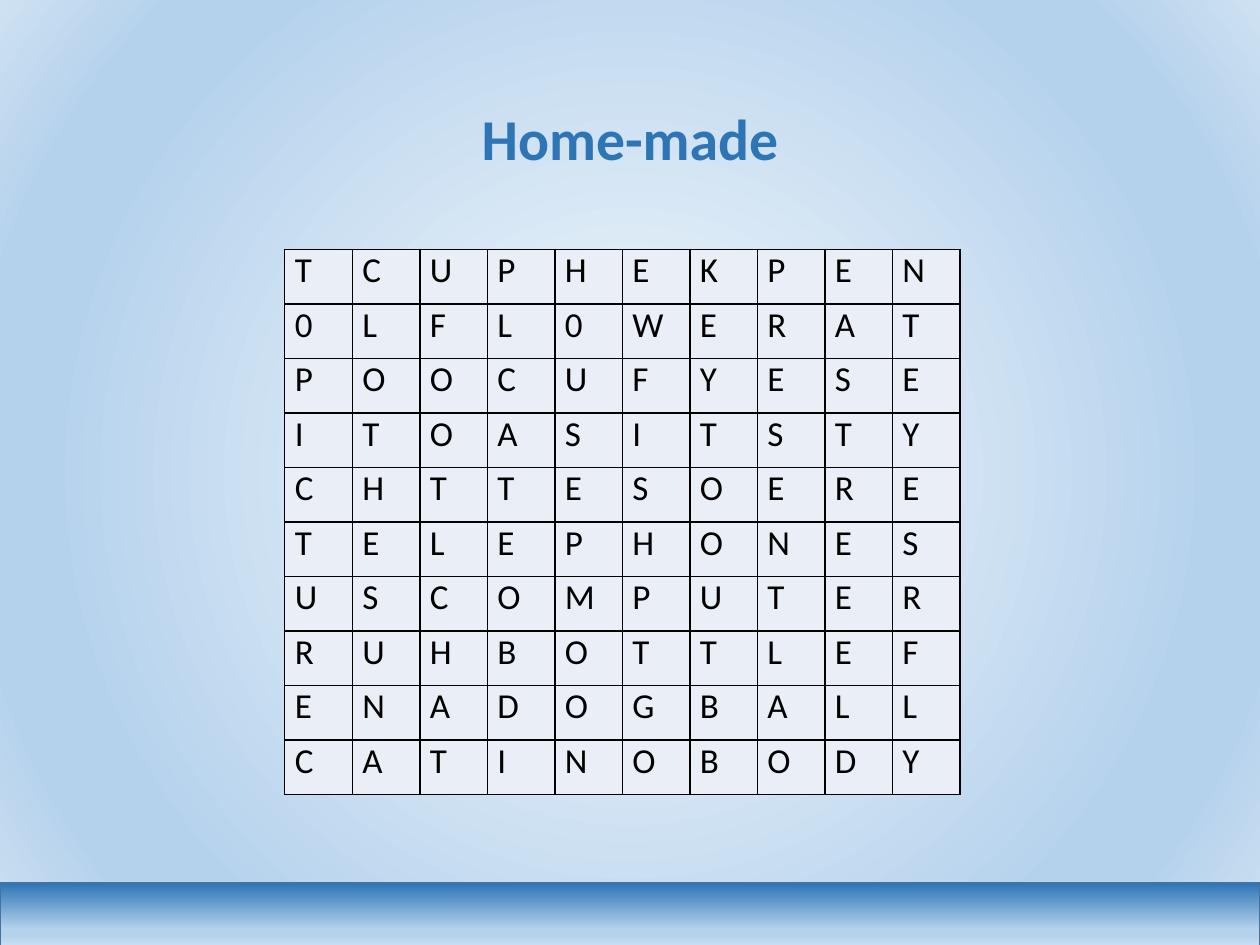
from pptx import Presentation
from pptx.dml.color import RGBColor
from pptx.enum.shapes import MSO_SHAPE as Shape
from pptx.enum.text import MSO_ANCHOR as Anchor, PP_ALIGN as Align
from pptx.oxml import parse_xml
from pptx.oxml.ns import nsdecls, qn
from pptx.util import Inches, Pt

BLACK = RGBColor(0x00, 0x00, 0x00)
BLUE = RGBColor(0x2E, 0x75, 0xB6)
EDGE_BLUE = RGBColor(0x43, 0x73, 0x9E)
SKY = RGBColor(0xB5, 0xD2, 0xEC)
PALE_SKY = RGBColor(0xCE, 0xE1, 0xF2)
NEAR_WHITE = RGBColor(0xF7, 0xFA, 0xFD)
CELL_BLUE = RGBColor(0xEA, 0xEF, 0xF7)

GLOW_STOPS = [(0, NEAR_WHITE), (74, SKY), (83, SKY), (100, PALE_SKY)]
FOOTER_STOPS = [(0, BLUE), (72, SKY), (83, SKY), (100, PALE_SKY)]
RADIAL = ('<a:path path="circle">'
          '<a:fillToRect l="50000" t="50000" r="50000" b="50000"/></a:path>')
DOWNWARD = '<a:lin ang="5400000" scaled="0"/>'

LETTER_ROWS = [
    "TCUPHEKPEN",
    "0LFL0WERAT",
    "POOCUFYESE",
    "ITOASITSTY",
    "CHTTESOERE",
    "TELEPHONES",
    "USCOMPUTER",
    "RUHBOTTLEF",
    "ENADOGBALL",
    "CATINOBODY",
]


def gradient_xml(stops, direction):
    marks = "".join(
        f'<a:gs pos="{share * 1000}"><a:srgbClr val="{color}"/></a:gs>'
        for share, color in stops)
    return (f'<a:gradFill {nsdecls("a")} rotWithShape="1">'
            f'<a:gsLst>{marks}</a:gsLst>{direction}</a:gradFill>')


class PuzzleSlide:
    """Places elements on a grid of 100 columns by 75 rows."""

    font = "Calibri"
    columns, rows = 100, 75

    def __init__(self, deck):
        self.slide = deck.slides.add_slide(deck.slide_layouts[6])
        self.column = deck.slide_width / self.columns
        self.row = deck.slide_height / self.rows

    def place(self, left, top, width, height):
        return (round(left * self.column), round(top * self.row),
                round(width * self.column), round(height * self.row))

    def set_text(self, paragraph, text, size, color, bold=False):
        paragraph.text = text
        font = paragraph.runs[0].font
        font.name, font.size, font.bold = self.font, Pt(size), bold
        font.color.rgb = color

    def background(self, stops):
        fill = gradient_xml(stops, RADIAL)
        self.slide.element.cSld.insert(0, parse_xml(
            f'<p:bg {nsdecls("p", "a")}><p:bgPr>{fill}'
            '<a:effectLst/></p:bgPr></p:bg>'))

    def band(self, area, stops, edge):
        band = self.slide.shapes.add_shape(Shape.RECTANGLE, *self.place(*area))
        band.shadow.inherit = False
        band.fill.gradient()
        properties = band.element.spPr
        properties.replace(properties.find(qn("a:gradFill")),
                           parse_xml(gradient_xml(stops, DOWNWARD)))
        band.line.color.rgb = edge
        band.line.width = Pt(1)

    def title(self, area, text):
        frame = self.slide.shapes.add_textbox(*self.place(*area)).text_frame
        frame.word_wrap = True
        frame.vertical_anchor = Anchor.MIDDLE
        heading = frame.paragraphs[0]
        heading.alignment = Align.CENTER
        heading.line_spacing = 0.9
        self.set_text(heading, text, 33, BLUE, bold=True)

    def border(self, cell, color):
        properties = cell._tc.get_or_add_tcPr()
        for side in ("lnL", "lnR", "lnT", "lnB"):
            properties.append(parse_xml(
                f'<a:{side} {nsdecls("a")} w="{Pt(1)}"><a:solidFill>'
                f'<a:srgbClr val="{color}"/></a:solidFill></a:{side}>'))

    def letter_grid(self, area, letter_rows):
        table = self.slide.shapes.add_table(
            len(letter_rows), len(letter_rows[0]), *self.place(*area)).table
        table.first_row = table.horz_banding = False
        for cell, letter in zip(table.iter_cells(), "".join(letter_rows)):
            cell.margin_left = cell.margin_right = Inches(0.08)
            cell.margin_top = cell.margin_bottom = 0
            self.border(cell, BLACK)
            cell.fill.solid()
            cell.fill.fore_color.rgb = CELL_BLUE
            paragraph = cell.text_frame.paragraphs[0]
            paragraph.space_after = Pt(6)
            self.set_text(paragraph, letter, 20, BLACK)


def main():
    deck = Presentation()
    deck.slide_width, deck.slide_height = Inches(10), Inches(7.5)
    puzzle = PuzzleSlide(deck)
    puzzle.background(GLOW_STOPS)
    puzzle.band((0, 70.1, 100, 5.1), FOOTER_STOPS, EDGE_BLUE)
    puzzle.title((6.9, 4, 86.2, 14.5), "Home-made")
    puzzle.letter_grid((22.6, 19.8, 53.6, 43.3), LETTER_ROWS)
    deck.save("out.pptx")


if __name__ == "__main__":
    main()
